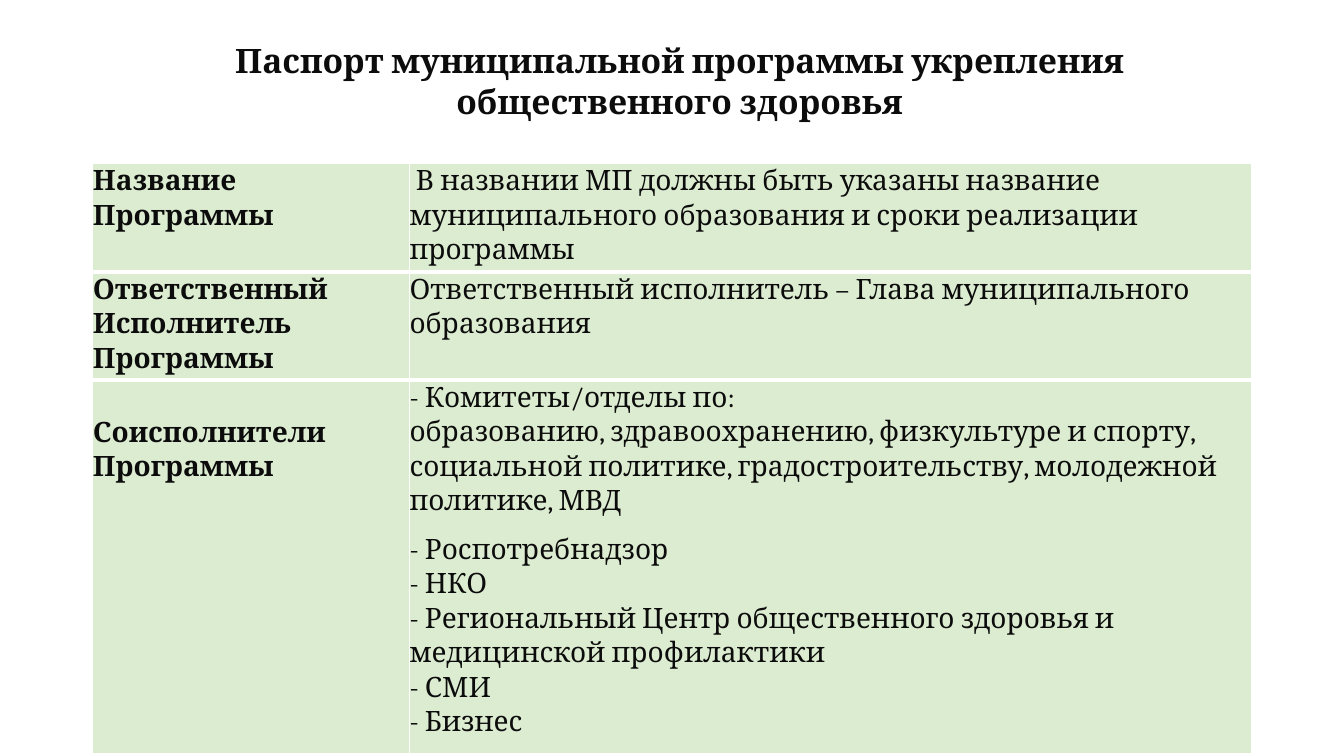
from lxml import etree
from pptx import Presentation
from pptx.dml.color import RGBColor
from pptx.enum.text import PP_ALIGN
from pptx.oxml.ns import qn
from pptx.util import Cm, Pt

CENTER = PP_ALIGN.CENTER
FONT = "Cambria"
INK = "0C0C0C"
GREEN = "DCECD1"
WHITE = "FFFFFF"


def color(hex_value):
    return RGBColor.from_string(hex_value)


def style(paragraph, size, bold):
    font = paragraph.font
    font.name = FONT
    font.size = Pt(size)
    font.bold = bold
    font.color.rgb = color(INK)


deck = Presentation()
deck.slide_width = Cm(33.87)
deck.slide_height = Cm(19.05)
slide = deck.slides.add_slide(deck.slide_layouts[6])

heading = slide.shapes.add_textbox(Cm(5.38), Cm(0.89), Cm(23.5), Cm(2.31)).text_frame
heading.word_wrap = True
heading.text = "Паспорт муниципальной программы укрепления общественного здоровья"
heading.paragraphs[0].alignment = CENTER
style(heading.paragraphs[0], 24, True)

passport_rows = [
    (["Название Программы"],
     ["В названии МП должны быть указаны название муниципального образования "
      "и сроки реализации программы"]),
    (["Ответственный", "Исполнитель", "Программы"],
     ["Ответственный исполнитель – Глава муниципального образования"]),
    (["Соисполнители Программы"],
     ["- Комитеты/отделы по:",
      "образованию, здравоохранению, физкультуре и спорту, социальной политике, "
      "градостроительству, молодежной политике, МВД",
      "- Роспотребнадзор",
      "- НКО",
      "- Региональный Центр общественного здоровья и медицинской профилактики",
      "- СМИ",
      "- Бизнес"]),
]
column_widths = [7.98, 21.23]
row_heights = [2.74, 2.7, 9.42]

passport = slide.shapes.add_table(
    len(row_heights), len(column_widths), Cm(2.34), Cm(4.11),
    Cm(sum(column_widths)), Cm(sum(row_heights))).table
passport.first_row = False
passport.horz_banding = False
for column, width in zip(passport.columns, column_widths):
    column.width = Cm(width)
for row, height in zip(passport.rows, row_heights):
    row.height = Cm(height)

last_row = len(passport_rows) - 1
for row_index, entries in enumerate(passport_rows):
    for column_index, lines in enumerate(entries):
        cell = passport.cell(row_index, column_index)
        cell.margin_left = cell.margin_right = cell.margin_top = cell.margin_bottom = 0

        border_widths = {
            "a:lnL": 1,
            "a:lnR": 1,
            "a:lnT": 3 if row_index > 0 else 1,
            "a:lnB": 3 if row_index < last_row else 1,
        }
        properties = cell._tc.get_or_add_tcPr()
        for side, width in border_widths.items():
            border = etree.SubElement(properties, qn(side), w=str(Pt(width)))
            border_fill = etree.SubElement(border, qn("a:solidFill"))
            etree.SubElement(border_fill, qn("a:srgbClr"), val=WHITE)
        cell.fill.solid()
        cell.fill.fore_color.rgb = color(GREEN)

        cell.text = "\n".join(lines)
        for paragraph in cell.text_frame.paragraphs:
            paragraph.line_spacing = 1.07
            style(paragraph, 20, column_index == 0)

program_name = passport.cell(0, 1).text_frame.paragraphs[0]
program_name._p.get_or_add_pPr().set("indent", str(Cm(0.16)))
passport.cell(last_row, 0).margin_top = Cm(0.88)
passport.cell(last_row, 1).text_frame.paragraphs[2].space_before = Pt(10)

deck.save("out.pptx")
